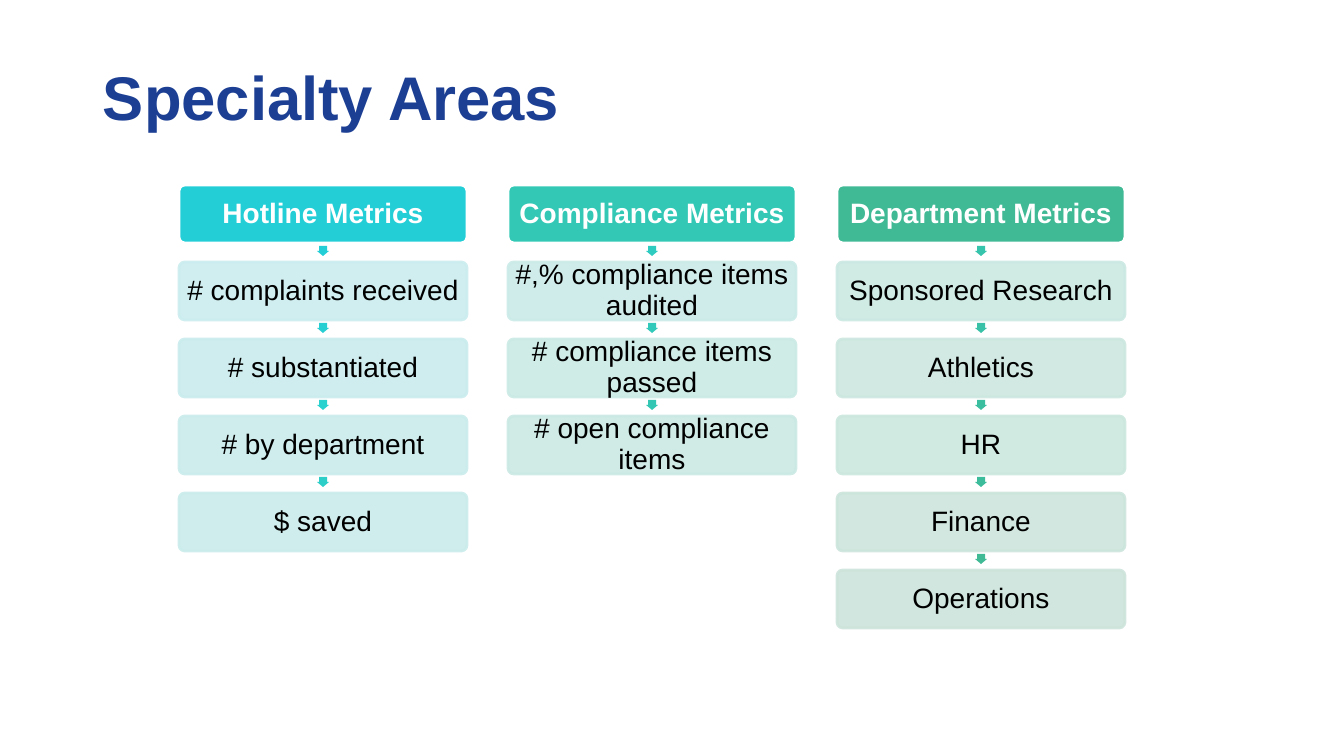
from lxml import etree
from pptx import Presentation
from pptx.dml.color import RGBColor
from pptx.enum.shapes import MSO_SHAPE
from pptx.enum.text import MSO_ANCHOR, MSO_AUTO_SIZE, PP_ALIGN
from pptx.oxml.ns import qn
from pptx.util import Pt

ROUNDED, ARROW = MSO_SHAPE.ROUNDED_RECTANGLE, MSO_SHAPE.RIGHT_ARROW
MIDDLE, NO_FIT = MSO_ANCHOR.MIDDLE, MSO_AUTO_SIZE.NONE
LEFT, CENTER = PP_ALIGN.LEFT, PP_ALIGN.CENTER

NAVY = RGBColor(0x1C, 0x3F, 0x94)
WHITE = RGBColor(0xFF, 0xFF, 0xFF)
BLACK = RGBColor(0x00, 0x00, 0x00)
CYAN = RGBColor(0x24, 0xCE, 0xD7)
TEAL = RGBColor(0x32, 0xC8, 0xB5)
GREEN = RGBColor(0x40, 0xB9, 0x95)

# Content: heading, heading colour, then (metric, arrow colour, box colour)
TITLE = "Specialty Areas"
AREAS = [
    ("Hotline Metrics", CYAN, [
        ("# complaints received", CYAN, RGBColor(0xCB, 0xED, 0xEF)),
        ("# substantiated", RGBColor(0x27, 0xCF, 0xD3), RGBColor(0xCA, 0xEC, 0xED)),
        ("# by department", RGBColor(0x29, 0xD1, 0xCF), RGBColor(0xCB, 0xEC, 0xEC)),
        ("$ saved", RGBColor(0x2C, 0xCE, 0xC7), RGBColor(0xCA, 0xEC, 0xEB)),
    ]),
    ("Compliance Metrics", TEAL, [
        ("#,% compliance items audited", RGBColor(0x2E, 0xCC, 0xC0), RGBColor(0xCB, 0xEB, 0xE8)),
        ("# compliance items passed", RGBColor(0x31, 0xC9, 0xB9), RGBColor(0xCB, 0xEA, 0xE5)),
        ("# open compliance items", RGBColor(0x33, 0xC7, 0xB3), RGBColor(0xCB, 0xE9, 0xE4)),
    ]),
    ("Department Metrics", GREEN, [
        ("Sponsored Research", RGBColor(0x36, 0xC4, 0xAC), RGBColor(0xCB, 0xE8, 0xE2)),
        ("Athletics", RGBColor(0x38, 0xC1, 0xA6), RGBColor(0xCC, 0xE7, 0xDF)),
        ("HR", RGBColor(0x3B, 0xBE, 0x9F), RGBColor(0xCB, 0xE7, 0xDE)),
        ("Finance", RGBColor(0x3D, 0xBC, 0x9B), RGBColor(0xCC, 0xE5, 0xDC)),
        ("Operations", GREEN, RGBColor(0xCD, 0xE4, 0xDB)),
    ]),
]

# Layout in px
PX_PER_INCH = 100.8
SLIDE_W, SLIDE_H = 1344, 756
GRID_X, GRID_Y = 179, 185
COLUMN_STEP, ROW_STEP = 329, 77
BOX_W, BOX_H, BOX_INSET = 288, 58, 2
ARROW_W, ARROW_H, ARROW_RISE = 10, 12, 17
OPACITY = 90


def px(length):
    return round(length * 914400 / PX_PER_INCH)


def add_words(paragraph, words, size, color, bold):
    run = paragraph.add_run()
    run.text = words
    run.font.name = "Arial"
    run.font.size = Pt(size)
    run.font.bold = bold
    run.font.color.rgb = color


def add_plain_shape(kind, left, top, width, height, color):
    shape = slide.shapes.add_shape(kind, px(left), px(top), px(width), px(height))
    shape.shadow.inherit = False
    shape.fill.solid()
    shape.fill.fore_color.rgb = color
    return shape


def add_box(left, top, words, fill, outline, ink, bold):
    box = add_plain_shape(ROUNDED, left, top, BOX_W, BOX_H, fill)
    box.adjustments[0] = 0.1
    box.line.color.rgb = outline
    box.line.width = Pt(2)
    frame = box.text_frame
    frame.word_wrap = True
    frame.vertical_anchor = MIDDLE
    frame.margin_left = frame.margin_right = px(BOX_INSET)
    frame.margin_top = frame.margin_bottom = px(BOX_INSET)
    paragraph = frame.paragraphs[0]
    paragraph.alignment = CENTER
    paragraph.line_spacing = 0.9
    add_words(paragraph, words, 20, ink, bold)
    return box


def make_translucent(box):
    for color in box.fill._xPr.iter(qn("a:srgbClr")):
        etree.SubElement(color, qn("a:alpha")).set("val", str(OPACITY * 1000))


def add_down_arrow(center_x, top, color):
    arrow = add_plain_shape(ARROW, center_x - ARROW_W / 2, top, ARROW_W, ARROW_H, color)
    arrow.adjustments[0] = 0.667
    arrow.adjustments[1] = 0.5
    arrow.rotation = 90
    arrow.line.fill.background()


presentation = Presentation()
presentation.slide_width, presentation.slide_height = px(SLIDE_W), px(SLIDE_H)
slide = presentation.slides.add_slide(presentation.slide_layouts[5])

# Title
title = slide.shapes.title
title.left, title.top, title.width, title.height = px(93), px(32), px(1159), px(128)
title_frame = title.text_frame
title_frame.auto_size = NO_FIT
title_frame.vertical_anchor = MIDDLE
title_frame.margin_left = title_frame.margin_right = px(10)
title_frame.margin_top = title_frame.margin_bottom = 0
title_frame.paragraphs[0].alignment = LEFT
add_words(title_frame.paragraphs[0], TITLE, 44, NAVY, True)

# One column per area: heading, then an arrow and a box for each metric
for column, (heading, heading_color, metrics) in enumerate(AREAS):
    left = GRID_X + column * COLUMN_STEP
    add_box(left, GRID_Y, heading, heading_color, WHITE, WHITE, True)
    for row, (metric, arrow_color, box_color) in enumerate(metrics, start=1):
        top = GRID_Y + row * ROW_STEP
        add_down_arrow(left + BOX_W / 2, top - ARROW_RISE, arrow_color)
        make_translucent(add_box(left, top, metric, box_color, box_color, BLACK, False))

presentation.save("out.pptx")
